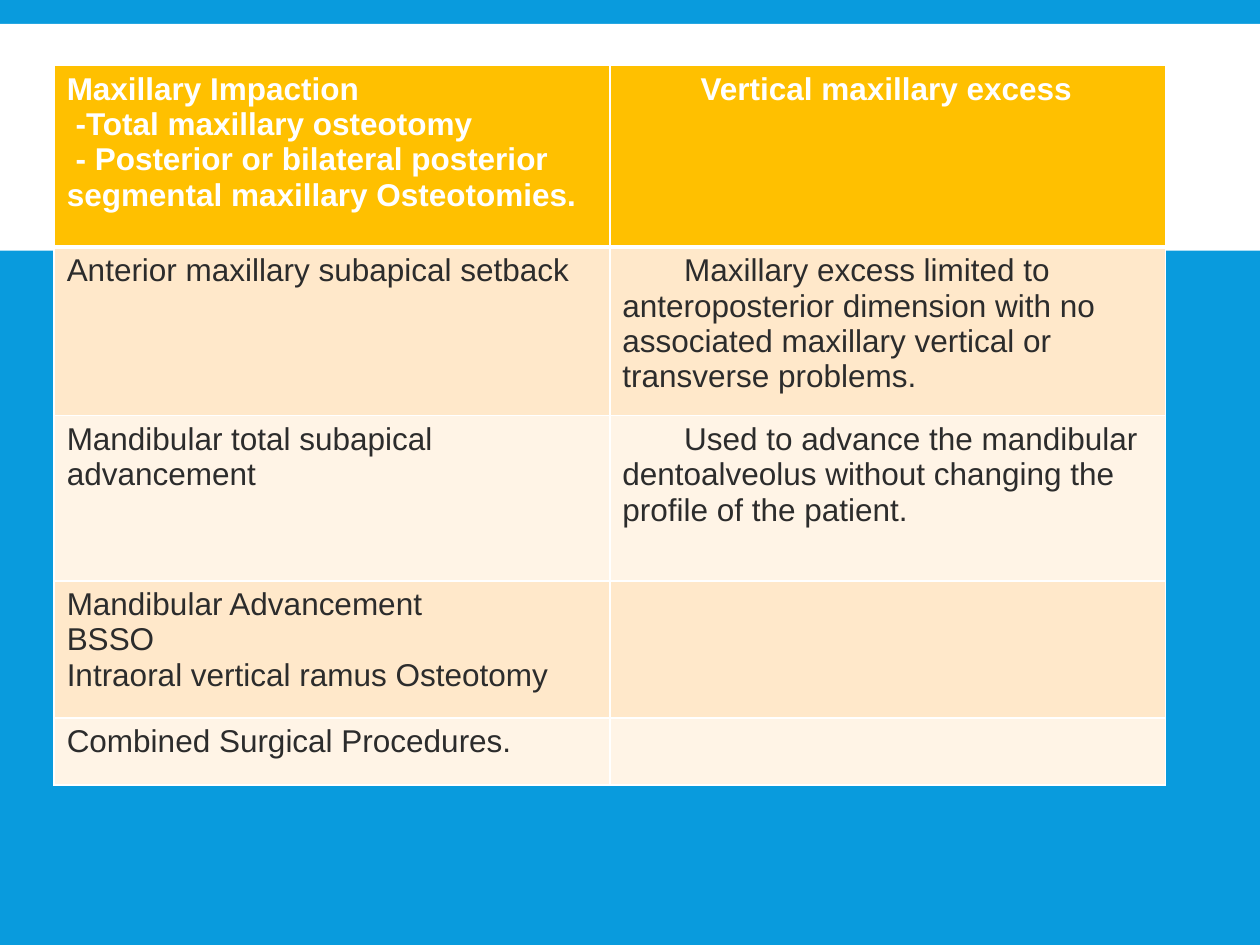
from lxml import etree
from pptx import Presentation
from pptx.dml.color import RGBColor
from pptx.enum.shapes import MSO_SHAPE
from pptx.oxml.ns import qn
from pptx.util import Inches, Pt

RECTANGLE = MSO_SHAPE.RECTANGLE
BLANK_LAYOUT = 6

COLORS = {
    "background": "099BDD",
    "white": "FFFFFF",
    "header": "FFC000",
    "odd_row": "FFE8CA",
    "even_row": "FFF4E6",
    "text": "2C2C2C",
}

# Each cell lists its paragraphs as (text, first-line indent in inches).
PROCEDURES = [
    ([("Maxillary Impaction", 0),
      ("-Total maxillary osteotomy", 0.07),
      ("- Posterior or bilateral posterior segmental maxillary Osteotomies.", 0.07)],
     [("Vertical maxillary excess", 0.62)]),
    ([("Anterior maxillary subapical setback", 0)],
     [("Maxillary excess limited to anteroposterior dimension with no "
       "associated maxillary vertical or transverse problems.", 0.49)]),
    ([("Mandibular total subapical advancement", 0)],
     [("Used to advance the mandibular dentoalveolus without changing the "
       "profile of the patient.", 0.49)]),
    ([("Mandibular Advancement", 0),
      ("BSSO", 0),
      ("Intraoral vertical ramus Osteotomy", 0)], []),
    ([("Combined Surgical Procedures.", 0)], []),
]
ROW_HEIGHTS = [1.44, 1.34, 1.31, 1.09, 0.53]
COLUMN_WIDTH = 4.41


def add_text(paragraph, text, indent=0, size=18, font="Arial", color="text", bold=False):
    properties = paragraph._p.get_or_add_pPr()
    properties.set("marL", "0")
    properties.set("indent", str(Inches(indent)))
    run = paragraph.add_run()
    run.text = text
    run.font.size = Pt(size)
    run.font.name = font
    run.font.bold = bold
    run.font.color.rgb = RGBColor.from_string(COLORS[color])


def set_borders(cell, **widths):
    """Draw white borders; widths are points keyed by side, in L, R, T, B order."""
    properties = cell._tc.get_or_add_tcPr()
    for position, (side, width) in enumerate(widths.items()):
        line = etree.Element(qn(f"a:ln{side}"), w=str(Pt(width)))
        solid = etree.SubElement(line, qn("a:solidFill"))
        etree.SubElement(solid, qn("a:srgbClr"), val=COLORS["white"])
        properties.insert(position, line)


prs = Presentation()
prs.slide_width, prs.slide_height = Inches(10), Inches(7.5)
slide = prs.slides.add_slide(prs.slide_layouts[BLANK_LAYOUT])
slide.background.fill.solid()
slide.background.fill.fore_color.rgb = RGBColor.from_string(COLORS["background"])

title_band = slide.shapes.add_shape(
    RECTANGLE, 0, Inches(0.19), prs.slide_width, Inches(1.8))
title_band.shadow.inherit = False
title_band.fill.solid()
title_band.fill.fore_color.rgb = RGBColor.from_string(COLORS["white"])
title_band.line.fill.background()

table = slide.shapes.add_table(
    len(PROCEDURES), 2, Inches(0.43), Inches(0.52),
    Inches(2 * COLUMN_WIDTH), Inches(sum(ROW_HEIGHTS))).table
for column in table.columns:
    column.width = Inches(COLUMN_WIDTH)

for row_index, (contents, height) in enumerate(zip(PROCEDURES, ROW_HEIGHTS)):
    table.rows[row_index].height = Inches(height)
    is_header = row_index == 0
    band = "header" if is_header else ("even_row", "odd_row")[row_index % 2]
    for column_index, paragraphs in enumerate(contents):
        cell = table.cell(row_index, column_index)
        cell.fill.solid()
        cell.fill.fore_color.rgb = RGBColor.from_string(COLORS[band])
        set_borders(cell, L=1, R=1, T=3 if row_index == 1 else 1,
                    B=3 if is_header else 1)
        frame = cell.text_frame
        for number, (text, indent) in enumerate(paragraphs):
            paragraph = frame.add_paragraph() if number else frame.paragraphs[0]
            add_text(paragraph, text, indent=indent, bold=is_header,
                     color="white" if is_header else "text")

prs.save("out.pptx")
